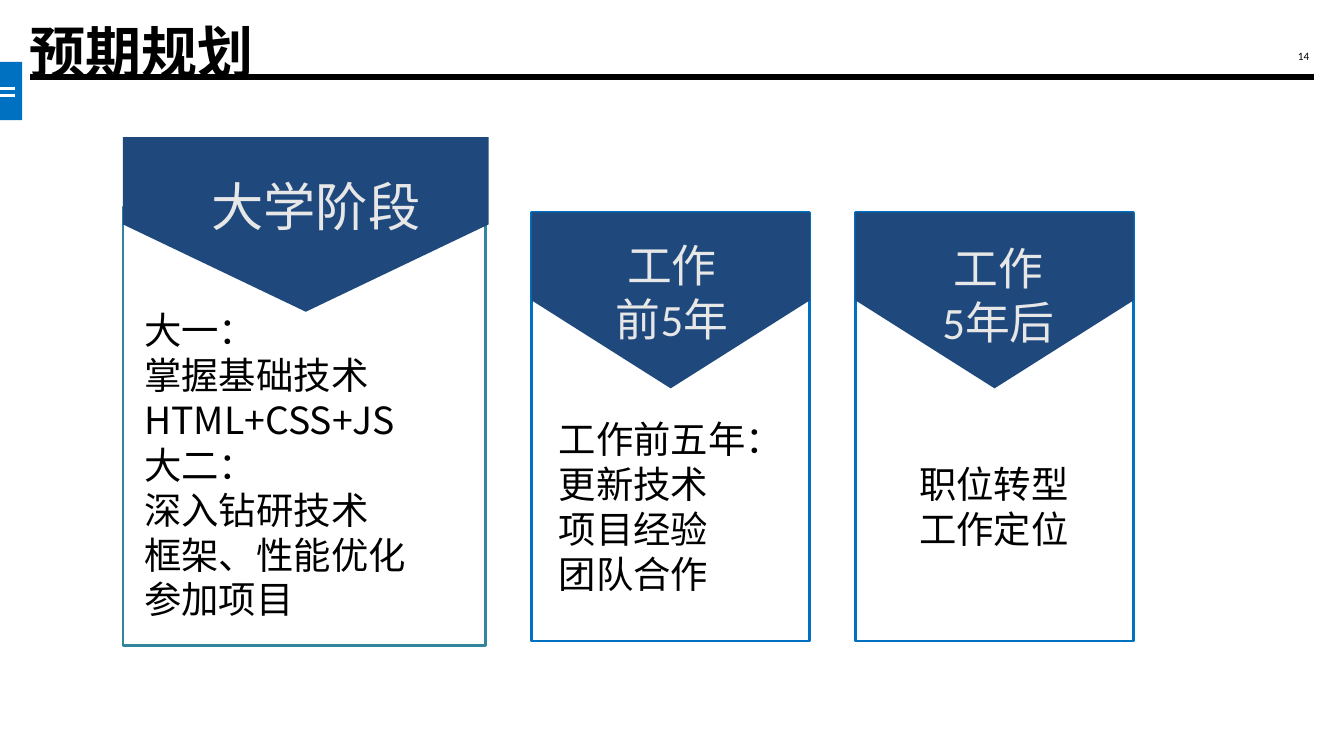
from dataclasses import dataclass

from lxml import etree
from pptx import Presentation
from pptx.dml.color import RGBColor
from pptx.enum.shapes import MSO_CONNECTOR, MSO_SHAPE
from pptx.enum.text import MSO_ANCHOR, PP_ALIGN
from pptx.oxml.ns import qn
from pptx.util import Emu, Pt

PX = 4572  # EMU in one px, 200 px to the inch

RECT = MSO_SHAPE.RECTANGLE
PLATE = MSO_SHAPE.PENTAGON
LINE = MSO_CONNECTOR.STRAIGHT
LEFT, CENTER = PP_ALIGN.LEFT, PP_ALIGN.CENTER
TOP, MIDDLE = MSO_ANCHOR.TOP, MSO_ANCHOR.MIDDLE

BLACK = RGBColor(0x00, 0x00, 0x00)
WHITE = RGBColor(0xFF, 0xFF, 0xFF)
BLUE = RGBColor(0x00, 0x70, 0xC0)
NAVY = RGBColor(0x1F, 0x49, 0x7D)
TEAL = RGBColor(0x31, 0x85, 0x9C)
PALE = RGBColor(0xE7, 0xE7, 0xE7)

HAN = "Noto Sans CJK SC"


@dataclass
class Box:
    x: int
    y: int
    w: int
    h: int


@dataclass
class Label:
    box: Box
    lines: list[str]
    size: int
    align: PP_ALIGN = CENTER


@dataclass
class Card:
    frame: Box
    edge: RGBColor
    tag: Box
    head: Label
    body: Label


def px(*nums: int) -> list[Emu]:
    return [Emu(n * PX) for n in nums]


def add_shape(slide, kind, box: Box, fill=None, edge=None):
    shape = slide.shapes.add_shape(kind, *px(box.x, box.y, box.w, box.h))
    shape.shadow.inherit = False
    if fill is None:
        shape.fill.background()
    else:
        shape.fill.solid()
        shape.fill.fore_color.rgb = fill
    if edge is None:
        shape.line.fill.background()
    else:
        shape.line.color.rgb = edge
        shape.line.width = Pt(1.5)
    return shape


def add_tag(slide, box: Box) -> None:
    """Draw a plate pointing down that covers the given box."""
    shift = (box.w - box.h) // 2
    turned = Box(box.x + shift, box.y - shift, box.h, box.w)
    add_shape(slide, PLATE, turned, NAVY).rotation = 90


def add_rule(slide, x: int, end: int, y: int, color: RGBColor, width: float) -> None:
    line = slide.shapes.add_connector(LINE, *px(x, y, end, y))
    line.line.color.rgb = color
    line.line.width = Pt(width)
    etree.SubElement(line._element.spPr, qn("a:effectLst"))


def add_text(slide, label: Label, font: str, color: RGBColor, anchor=MIDDLE,
             inset: bool = False, bold: bool = False, space: float = 1.0) -> None:
    box = label.box
    frame = slide.shapes.add_textbox(*px(box.x, box.y, box.w, box.h)).text_frame
    look = {"word_wrap": True, "vertical_anchor": anchor}
    if not inset:
        look |= {f"margin_{side}": 0 for side in ("left", "top", "right", "bottom")}
    for name, value in look.items():
        setattr(frame, name, value)
    style = {"name": font, "size": Pt(label.size), "bold": bold}
    for i, line in enumerate(label.lines):
        para = frame.add_paragraph() if i else frame.paragraphs[0]
        para.alignment = label.align
        para.line_spacing = space
        run = para.add_run()
        run.text = line
        for name, value in style.items():
            setattr(run.font, name, value)
        run.font.color.rgb = color
        east = etree.SubElement(run._r.get_or_add_rPr(), qn("a:ea"))
        east.set("typeface", HAN)


def add_card(slide, card: Card) -> None:
    add_shape(slide, RECT, card.frame, edge=card.edge)
    add_tag(slide, card.tag)
    add_text(slide, card.head, "Calibri", PALE)
    add_text(slide, card.body, HAN, BLACK, TOP, inset=True)


CARDS = [
    Card(Box(183, 308, 540, 653), TEAL, Box(183, 204, 544, 260),
         Label(Box(293, 256, 354, 100), ["大学阶段"], 28),
         Label(Box(195, 448, 520, 492),
               ["大一：", "掌握基础技术", "HTML+CSS+JS", "大二：",
                "深入钻研技术", "框架、性能优化", "参加项目"], 20, LEFT)),
    Card(Box(791, 316, 414, 638), BLUE, Box(791, 316, 414, 262),
         Label(Box(852, 351, 296, 166), ["工作", "前5年"], 24),
         Label(Box(812, 610, 374, 292),
               ["工作前五年：", "更新技术", "项目经验", "团队合作"], 20, LEFT)),
    Card(Box(1273, 316, 414, 638), BLUE, Box(1273, 316, 414, 262),
         Label(Box(1338, 356, 296, 166), ["工作", "5年后"], 24),
         Label(Box(1300, 677, 358, 158), ["职位转型", "工作定位"], 20)),
]


def main() -> None:
    deck = Presentation()
    deck.slide_width, deck.slide_height = px(2000, 1125)
    slide = deck.slides.add_slide(deck.slide_layouts[6])

    # Side tab and title rule
    add_shape(slide, RECT, Box(0, 92, 33, 87), BLUE)
    for y in (132, 142):
        add_rule(slide, 0, 22, y, WHITE, 1.5)
    add_rule(slide, 45, 1955, 115, BLACK, 3)

    # Title and page number
    title = Label(Box(44, 16, 956, 110), ["预期规划"], 30, LEFT)
    add_text(slide, title, "Roboto", BLACK, bold=True, space=1.1)
    add_text(slide, Label(Box(1880, 73, 120, 22), ["14"], 6), "Calibri", BLACK)

    # Stage cards
    for card in CARDS:
        add_card(slide, card)

    deck.save("out.pptx")


if __name__ == "__main__":
    main()
